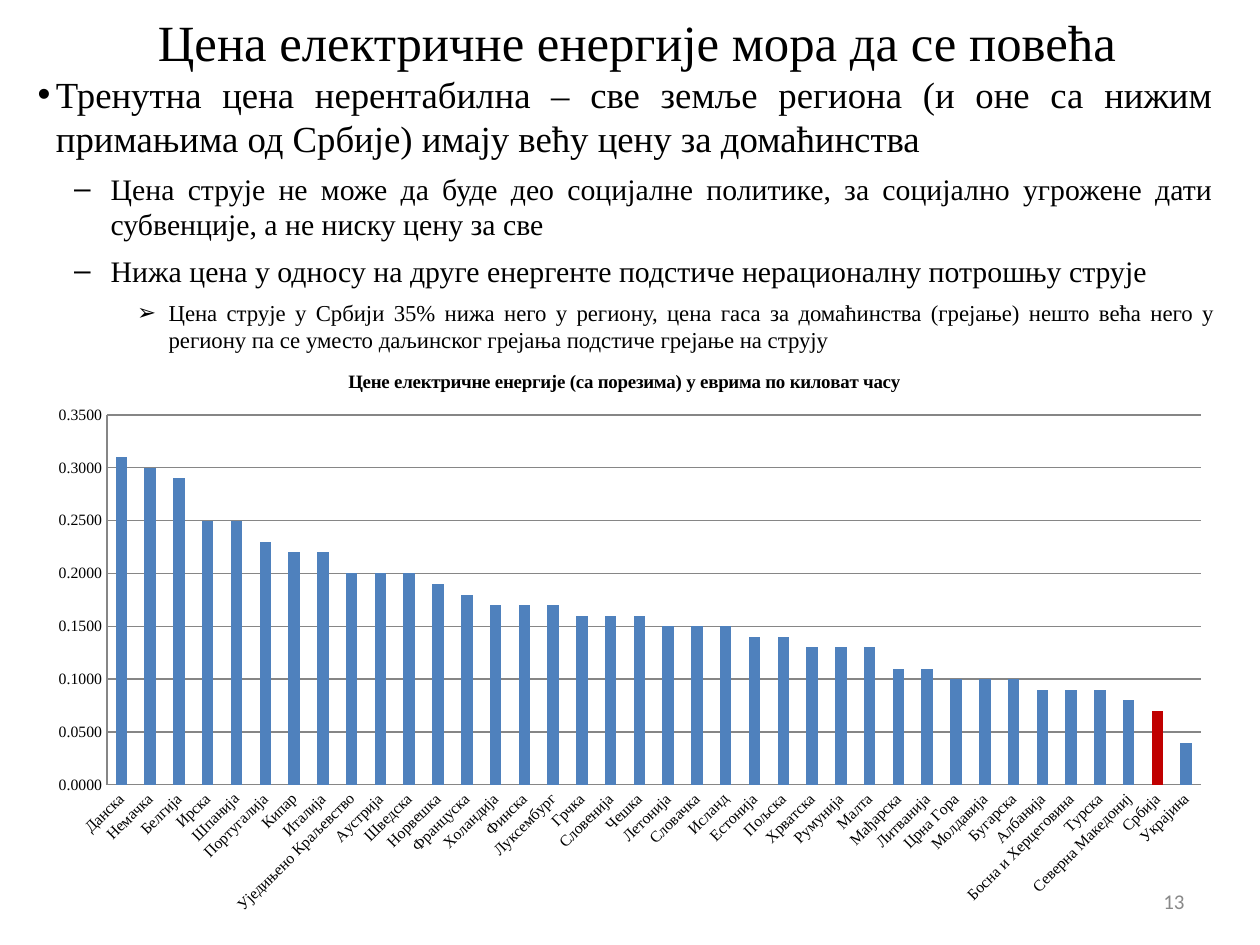
from lxml import etree
from pptx import Presentation
from pptx.chart.data import CategoryChartData
from pptx.dml.color import RGBColor
from pptx.enum.chart import XL_CHART_TYPE, XL_TICK_MARK
from pptx.enum.text import MSO_ANCHOR, PP_ALIGN
from pptx.oxml.ns import qn
from pptx.util import Pt

COLUMNS = XL_CHART_TYPE.COLUMN_CLUSTERED
NO_TICK = XL_TICK_MARK.NONE
TOP, MIDDLE = MSO_ANCHOR.TOP, MSO_ANCHOR.MIDDLE
CENTER, RIGHT, JUSTIFY = PP_ALIGN.CENTER, PP_ALIGN.RIGHT, PP_ALIGN.JUSTIFY

SERIF, SANS = "Times New Roman", "Calibri"
COLORS = {"text": "000000", "number": "898989", "bar": "4F81BD",
          "serbia": "C00000", "grid": "868686"}

LEVELS = [(21, 10.5, -20.88, "•"), (17, 41.76, -20.88, "–"), (13, 74.88, -18, "➢")]
POINTS = [
    (0, "Тренутна цена нерентабилна – све земље региона (и оне са нижим "
        "примањима од Србије) имају већу цену за домаћинства"),
    (1, "Цена струје не може да буде део социјалне политике, за социјално "
        "угрожене дати субвенције, а не ниску цену за све"),
    (1, "Нижа цена у односу на друге енергенте подстиче нерационалну потрошњу струје"),
    (2, "Цена струје у Србији 35% нижа него у региону, цена гаса за домаћинства "
        "(грејање) нешто већа него у региону па се уместо даљинског грејања "
        "подстиче грејање на струју"),
]
PRICES = {
    "Данска": 0.31, "Немачка": 0.3, "Белгија": 0.29, "Ирска": 0.25,
    "Шпанија": 0.25, "Португалија": 0.23, "Кипар": 0.22, "Италија": 0.22,
    "Уједињено Краљевство": 0.2, "Аустрија": 0.2, "Шведска": 0.2,
    "Норвешка": 0.19, "Француска": 0.18, "Холандија": 0.17, "Финска": 0.17,
    "Луксембург": 0.17, "Грчка": 0.16, "Словенија": 0.16, "Чешка": 0.16,
    "Летонија": 0.15, "Словачка": 0.15, "Исланд": 0.15, "Естонија": 0.14,
    "Пољска": 0.14, "Хрватска": 0.13, "Румунија": 0.13, "Малта": 0.13,
    "Мађарска": 0.11, "Литванија": 0.11, "Црна Гора": 0.1, "Молдавија": 0.1,
    "Бугарска": 0.1, "Албанија": 0.09, "Босна и Херцеговина": 0.09,
    "Турска": 0.09, "Северна Македониј": 0.08, "Србија": 0.07, "Украјина": 0.04,
}


def rgb(name):
    return RGBColor.from_string(COLORS[name])


class Deck:
    """Holds the style and the current slide."""

    def __init__(self, width, height):
        self.prs = Presentation()
        self.prs.slide_width, self.prs.slide_height = Pt(width), Pt(height)
        self.s = self.prs.slides.add_slide(self.prs.slide_layouts[6])

    def style(self, font, size, color="text", name=SERIF, bold=False):
        font.size, font.name, font.bold = Pt(size), name, bold
        font.color.rgb = rgb(color)

    def box(self, at, anchor):
        tf = self.s.shapes.add_textbox(*map(Pt, at)).text_frame
        tf.word_wrap, tf.vertical_anchor = True, anchor
        return tf

    def run(self, p, text, size, **kw):
        r = p.add_run()
        r.text = text
        self.style(r.font, size, **kw)

    def label(self, at, text, size, align, **kw):
        p = self.box(at, MIDDLE).paragraphs[0]
        p.alignment = align
        self.run(p, text, size, **kw)

    def bullets(self, at, items):
        tf = self.box(at, TOP)
        for i, (level, text) in enumerate(items):
            size, margin, indent, char = LEVELS[level]
            p = tf.add_paragraph() if i else tf.paragraphs[0]
            p.alignment, p.level = JUSTIFY, level
            p.space_before = p.space_after = Pt(3)
            self.run(p, text, size)
            pPr = p._p.get_or_add_pPr()
            pPr.set("marL", str(Pt(margin)))
            pPr.set("indent", str(Pt(indent)))
            etree.SubElement(pPr, qn("a:buFont"), typeface="Arial")
            etree.SubElement(pPr, qn("a:buChar"), char=char)

    def columns(self, at, title, title_at, prices, accent, plot_at):
        data = CategoryChartData(number_format="0.00")
        data.categories = list(prices)
        data.add_series("Series 1", list(prices.values()))
        chart = self.s.shapes.add_chart(COLUMNS, *map(Pt, at), data).chart
        self.style(chart.font, 9)
        chart.has_legend = False
        self.run(chart.chart_title.text_frame.paragraphs[0], title, 10.8, bold=True)
        chart.chart_title.include_in_layout = False

        bars = chart.plots[0]
        bars.gap_width, bars.vary_by_categories = 150, False
        series = bars.series[0]
        serbia = series.points[list(prices).index(accent)]
        for part, color in ((series, "bar"), (serbia, "serbia")):
            part.format.fill.solid()
            part.format.fill.fore_color.rgb = rgb(color)

        cat, val = chart.category_axis, chart.value_axis
        val.minimum_scale, val.maximum_scale, val.major_unit = 0, 0.35, 0.05
        val.has_major_gridlines = True
        val.tick_labels.number_format = "#,##0.0000"
        val.tick_labels.number_format_is_linked = False
        for axis in (cat, val):
            axis.major_tick_mark = axis.minor_tick_mark = NO_TICK
            self.style(axis.tick_labels.font, 9)
        for part in (cat, val, val.major_gridlines):
            part.format.line.color.rgb = rgb("grid")
            part.format.line.width = Pt(0.75)
        body = cat._element.find(qn("c:txPr")).find(qn("a:bodyPr"))
        body.set("rot", "-2700000")
        body.set("vert", "horz")

        size = at[2:]
        self.place(chart._chartSpace.chart.plotArea, 0, plot_at, size,
                   layoutTarget="inner")
        self.place(chart.chart_title._element, 1, title_at, size)

    def place(self, parent, index, at, size, **target):
        for old in parent.findall(qn("c:layout")):
            parent.remove(old)
        layout = etree.Element(qn("c:layout"))
        parent.insert(index, layout)
        manual = etree.SubElement(layout, qn("c:manualLayout"))
        shares = (length / whole for length, whole in zip(at, size * 2))
        values = {**target, "xMode": "edge", "yMode": "edge",
                  **dict(zip("xywh", shares))}
        for tag, value in values.items():
            etree.SubElement(manual, qn(f"c:{tag}"), val=str(value))


def main():
    deck = Deck(720, 540)
    deck.label((8.64, -1.44, 711.36, 50.4),
               "Цена електричне енергије мора да се повећа", 29, CENTER)
    deck.bullets((14.4, 37.44, 685.8, 124.56), POINTS)
    deck.label((516.24, 500.4, 167.76, 28.8), "13", 12, RIGHT,
               color="number", name=SANS)
    deck.columns((20.16, 196.56, 680.4, 332.64),
                 "Цене електричне енергије (са порезима) у еврима по киловат часу",
                 (177, 13.2), PRICES, "Србија", (41, 40.6, 625, 211.4))
    deck.prs.save("out.pptx")


if __name__ == "__main__":
    main()
